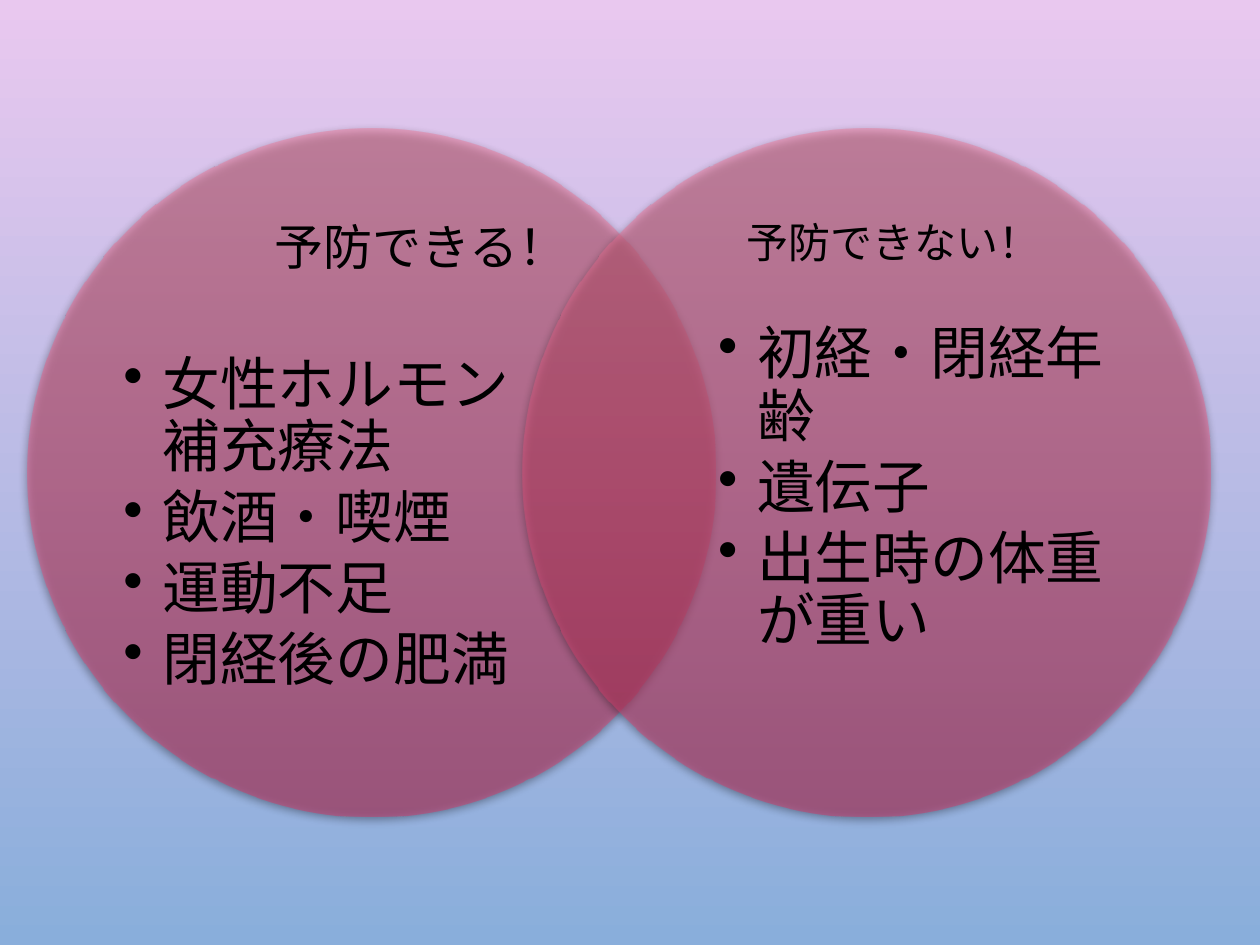
from dataclasses import dataclass

from lxml import etree
from pptx import Presentation
from pptx.dml.color import RGBColor
from pptx.enum.shapes import MSO_SHAPE
from pptx.enum.text import MSO_ANCHOR
from pptx.oxml.ns import qn
from pptx.util import Inches, Pt

OVAL = MSO_SHAPE.OVAL
TOP = MSO_ANCHOR.TOP
BLACK = "000000"
SIZE = 5.46
INDENT = 0.31
SKY = [(0, "E9C8EF"), (100, "89AEDB")]
ROSE = [(0, "E97B99"), (50, "E4547F"), (100, "D23465")]


@dataclass
class Head:
    text: str
    left: float
    width: float
    height: float
    size: int
    indent: float = 0


@dataclass
class Group:
    left: float
    list_left: float
    list_top: float
    items: list[str]
    head: Head


GROUPS = [
    Group(0.22, 0.98, 2.82,
          ["女性ホルモン補充療法", "飲酒・喫煙", "運動不足", "閉経後の肥満"],
          Head("予防できる！", 0.83, 4, 0.57, 28, 1.25)),
    Group(4.15, 5.7, 2.58,
          ["初経・閉経年齢", "遺伝子", "出生時の体重が重い"],
          Head("予防できない！", 5.83, 3.83, 0.5, 24)),
]


def color(code: str) -> RGBColor:
    return RGBColor.from_string(code)


def style(font, size: int, name: str) -> None:
    for key, value in {"size": Pt(size), "name": name}.items():
        setattr(font, key, value)
    font.color.rgb = color(BLACK)


def add(node, tag: str, **attrs):
    return etree.SubElement(node, qn(tag), {k: str(v) for k, v in attrs.items()})


def add_color(node, code: str, alpha: int) -> None:
    add(add(node, "a:srgbClr", val=color(code)), "a:alpha", val=alpha * 1000)


def shade(fill, node, stops: list, alpha: int = 100) -> None:
    """Give a fill a gradient that runs from top to bottom."""
    fill.gradient()
    fill.gradient_angle = 270
    ramp = next(node.iter(qn("a:gsLst")))
    for stop in list(ramp):
        ramp.remove(stop)
    for pos, code in stops:
        add_color(add(ramp, "a:gs", pos=pos * 1000), code, alpha)


def draw_oval(slide, left: float) -> None:
    oval = slide.shapes.add_shape(
        OVAL, Inches(left), Inches(1.02), Inches(SIZE), Inches(SIZE))
    shade(oval.fill, oval._element.spPr, ROSE, 50)
    oval.line.fill.background()
    oval.shadow.inherit = False
    effects = oval._element.spPr.find(qn("a:effectLst"))
    shadow = add(effects, "a:outerShdw", blurRad=Pt(5), dist=Pt(2),
                 dir=5400000, rotWithShape=0)
    add_color(shadow, BLACK, 69)


def add_box(slide, left: float, top: float, width: float, height: float):
    box = slide.shapes.add_textbox(
        Inches(left), Inches(top), Inches(width), Inches(height))
    frame = box.text_frame
    frame.word_wrap = True
    frame.vertical_anchor = TOP
    return frame


def draw_list(slide, group: Group) -> None:
    frame = add_box(slide, group.list_left, group.list_top, 3.15, 3)
    for side in ("left", "top", "right", "bottom"):
        setattr(frame, f"margin_{side}", 0)
    for i, item in enumerate(group.items):
        para = frame.paragraphs[0] if i == 0 else frame.add_paragraph()
        props = para._p.get_or_add_pPr()
        props.set("marL", str(Inches(INDENT)))
        props.set("indent", str(-Inches(INDENT)))
        add(props, "a:buChar", char="•")
        para.line_spacing = 0.9
        para.space_after = Pt(5)
        run = para.add_run()
        run.text = item
        style(run.font, 33, "Calibri")


def draw_head(slide, head: Head) -> None:
    frame = add_box(slide, head.left, 1.67, head.width, head.height)
    para = frame.paragraphs[0]
    para._p.get_or_add_pPr().set("marL", str(Inches(head.indent)))
    run = para.add_run()
    run.text = head.text
    style(run.font, head.size, "Times New Roman")


def main() -> None:
    deck = Presentation()
    deck.slide_width, deck.slide_height = Inches(10), Inches(7.5)
    slide = deck.slides.add_slide(deck.slide_layouts[6])
    shade(slide.background.fill, slide._element, SKY)

    # Overlapping circles with their lists
    for group in GROUPS:
        draw_oval(slide, group.left)
        draw_list(slide, group)

    # Headings on top
    for group in GROUPS:
        draw_head(slide, group.head)

    deck.save("out.pptx")


if __name__ == "__main__":
    main()
